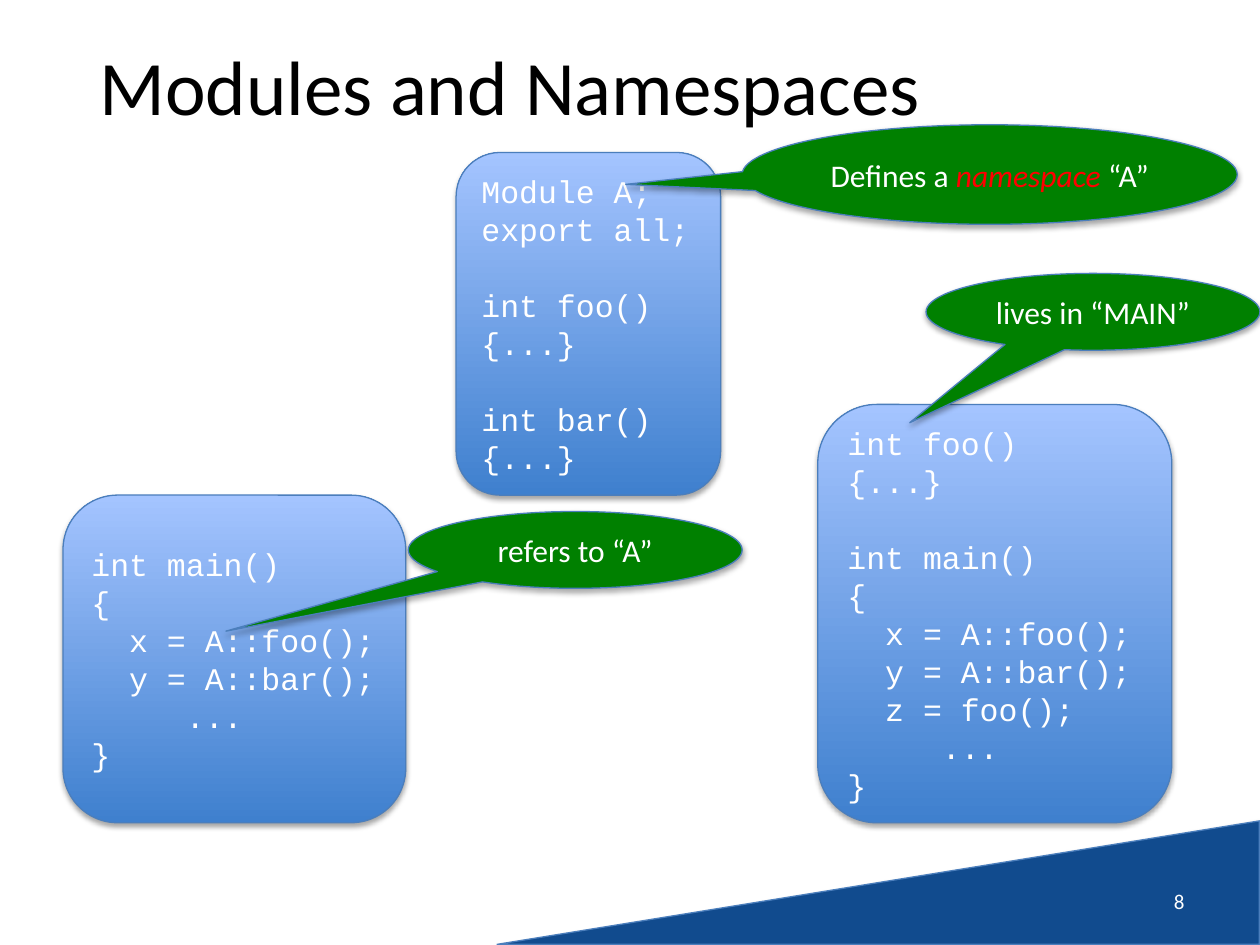
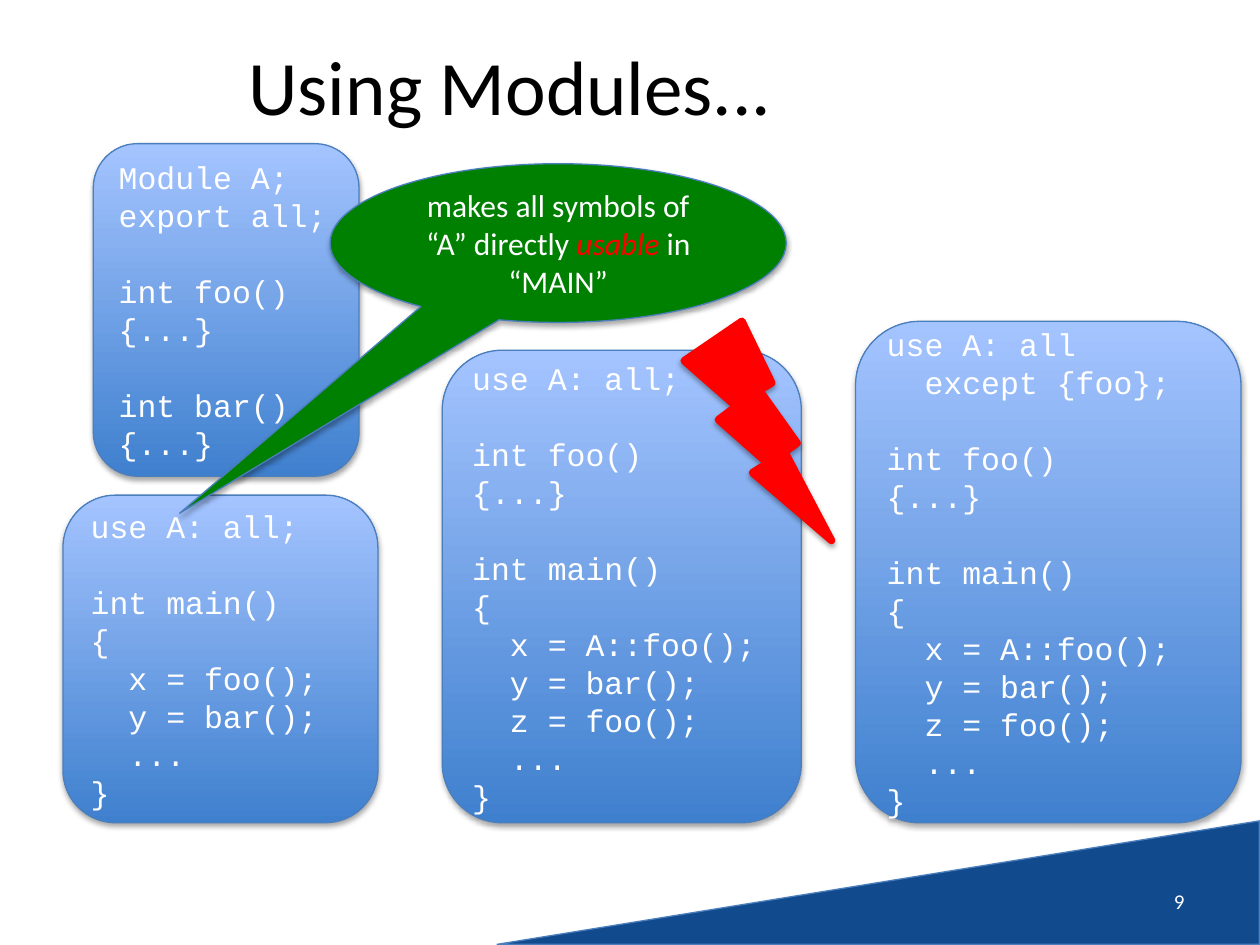
import lxml.etree
import pptx
import pptx.dml.color
import pptx.enum.shapes
import pptx.enum.text
import pptx.oxml
import pptx.oxml.ns
import pptx.util

Inches = pptx.util.Inches
Pt = pptx.util.Pt
SHAPES = pptx.enum.shapes.MSO_SHAPE
ALIGN = pptx.enum.text.PP_ALIGN
MIDDLE = pptx.enum.text.MSO_ANCHOR.MIDDLE

COLORS = {
    "band": "114B8E",
    "outline": "4B7EBC",
    "code_bottom": "3F80CE",
    "code_top": "A4C4FF",
    "callout": "008000",
    "alert": "FF0000",
    "title": "000000",
    "light": "FFFFFF",
    "shadow": "000000",
}
FONTS = {
    "title": {"name": "Calibri", "size": Pt(44)},
    "number": {"name": "Calibri", "size": Pt(12)},
    "callout": {"name": "Calibri", "size": Pt(18), "italic": False},
    "emphasis": {"name": "Calibri", "size": Pt(18), "italic": True},
    "code": {"name": "Courier New", "size": Pt(18)},
}
CODE_LINE = Pt(21.7)

MODULE_A = """Module A;
export all;

int foo()
{...}

int bar()
{...}"""

MAIN_QUALIFIED = """int main()
{
  x = A::foo();
  y = A::bar();
     ...
}"""

MAIN_WITH_OWN_FOO = """int foo()
{...}

int main()
{
  x = A::foo();
  y = A::bar();
  z = foo();
     ...
}"""

MAIN_USING_A = """use A: all;

int main()
{
  x = foo();
  y = bar();
  ...
}"""

FOO_AND_MAIN = """

int foo()
{...}

int main()
{
  x = A::foo();
  y = bar();
  z = foo();
  ...
}"""
MAIN_WITH_CLASH = "use A: all;" + FOO_AND_MAIN
MAIN_EXCEPT_FOO = "use A: all\n  except {foo};" + FOO_AND_MAIN


def rgb(color):
    return pptx.dml.color.RGBColor.from_string(COLORS[color])


def apply_format(target, values):
    for attribute, value in values.items():
        setattr(target, attribute, value)


def place(shape, box):
    sides = ("left", "top", "width", "height")
    apply_format(shape, dict(zip(sides, map(Inches, box))))


def add_run(paragraph, text, font, color):
    run = paragraph.add_run()
    run.text = text
    apply_format(run.font, FONTS[font])
    run.font.color.rgb = rgb(color)


def add_soft_shadow(shape):
    shape.shadow.inherit = False
    effects = shape.element.spPr.find(pptx.oxml.ns.qn("a:effectLst"))
    shadow = lxml.etree.SubElement(
        effects, pptx.oxml.ns.qn("a:outerShdw"),
        blurRad=str(Pt(3.1)), dist=str(Pt(1.8)), dir="5400000", rotWithShape="0")
    tint = lxml.etree.SubElement(
        shadow, pptx.oxml.ns.qn("a:srgbClr"), val=COLORS["shadow"])
    lxml.etree.SubElement(tint, pptx.oxml.ns.qn("a:alpha"), val="35000")


def add_outlined(slide, kind, box, fill=None, line="outline", weight=0.75):
    shape = slide.shapes.add_shape(kind, *map(Inches, box))
    if fill:
        shape.fill.solid()
        shape.fill.fore_color.rgb = rgb(fill)
    shape.line.color.rgb = rgb(line)
    shape.line.width = Pt(weight)
    add_soft_shadow(shape)
    return shape


def add_code_box(slide, box, code):
    """Gradient box of code; an empty code line becomes space before the next."""
    panel = add_outlined(slide, SHAPES.ROUNDED_RECTANGLE, box)
    panel.fill.gradient()
    panel.fill.gradient_angle = 90
    for stop, color in zip(panel.fill.gradient_stops, ("code_bottom", "code_top")):
        stop.color.rgb = rgb(color)
    frame = panel.text_frame
    apply_format(frame, {"word_wrap": True, "vertical_anchor": MIDDLE})
    paragraph, gap = frame.paragraphs[0], Pt(0)
    for number, line in enumerate(code.split("\n")):
        if not line:
            gap = CODE_LINE
            continue
        if number:
            paragraph = frame.add_paragraph()
        apply_format(paragraph, {"alignment": ALIGN.LEFT, "space_before": gap,
                                 "line_spacing": CODE_LINE})
        add_run(paragraph, line, "code", "light")
        gap = Pt(0)


def add_callout(slide, box, tip, before, emphasis="", after=""):
    """Oval callout; tip is the pointer's offset from the centre, in box sizes."""
    callout = add_outlined(slide, SHAPES.OVAL_CALLOUT, box, "callout")
    for index, offset in enumerate(tip):
        callout.adjustments[index] = offset
    frame = callout.text_frame
    apply_format(frame, {"word_wrap": True, "vertical_anchor": MIDDLE})
    paragraph = frame.paragraphs[0]
    paragraph.alignment = ALIGN.CENTER
    add_run(paragraph, before, "callout", "light")
    if emphasis:
        add_run(paragraph, emphasis, "emphasis", "alert")
        add_run(paragraph, after, "callout", "light")


def add_corner_band(layout, slide):
    """Draw the corner wedge once and hand it over to the layout."""
    wedge = add_outlined(slide, SHAPES.RIGHT_TRIANGLE, (6.48, 3.98, 0.98, 6.05), "band")
    wedge.rotation = 270
    layout.shapes.element.insert(2, wedge.element)


def add_page_number(slide, number):
    page = slide.shapes.add_textbox(*map(Inches, (7.17, 6.95, 2.33, 0.4)))
    apply_format(page.text_frame, {"word_wrap": True, "vertical_anchor": MIDDLE})
    paragraph = page.text_frame.paragraphs[0]
    paragraph.alignment = ALIGN.RIGHT
    add_run(paragraph, str(number), "number", "light")


def add_titled_slide(prs, layout, title, number):
    slide = prs.slides.add_slide(layout)
    heading = slide.shapes.title
    place(heading, (0.5, 0.05, 7.1, 1.25))
    heading.text_frame.vertical_anchor = MIDDLE
    paragraph = heading.text_frame.paragraphs[0]
    paragraph.alignment = ALIGN.CENTER
    add_run(paragraph, title, "title", "title")
    add_page_number(slide, number)
    return slide


def fill_namespaces(slide):
    add_code_box(slide, (3.62, 1.21, 2.1, 2.72), MODULE_A)
    add_code_box(slide, (0.5, 3.93, 2.72, 2.6), MAIN_QUALIFIED)
    add_callout(slide, (5.89, 0.99, 3.93, 0.79), (-0.735, 0.099),
                "Defines a ", "namespace ", "“A”")
    add_code_box(slide, (6.49, 3.21, 2.81, 3.32), MAIN_WITH_OWN_FOO)
    add_callout(slide, (7.35, 2.17, 2.65, 0.61), (-0.549, 1.443), "lives in “MAIN”")
    add_callout(slide, (3.24, 4.06, 2.65, 0.61), (-1.046, 1.057), "refers to “A”")


def fill_using_modules(slide):
    add_code_box(slide, (0.74, 1.14, 2.11, 2.64), MODULE_A)
    add_code_box(slide, (0.5, 3.93, 2.5, 2.6), MAIN_USING_A)
    add_code_box(slide, (3.51, 2.78, 2.85, 3.75), MAIN_WITH_CLASH)
    add_callout(slide, (2.62, 1.3, 3.62, 1.26), (-0.83, 1.702),
                "makes all symbols of “A” directly ", "usable ", "in “MAIN”")
    add_outlined(slide, SHAPES.LIGHTNING_BOLT, (5.43, 2.55, 1.17, 1.74),
                 "alert", "alert", 4.25)
    add_code_box(slide, (6.79, 2.55, 3.06, 3.98), MAIN_EXCEPT_FOO)


def main():
    prs = pptx.Presentation()
    apply_format(prs, {"slide_width": Inches(10), "slide_height": Inches(7.5)})
    layout = prs.slide_layouts.get_by_name("Title Only")

    namespaces = add_titled_slide(prs, layout, "Modules and Namespaces", 8)
    add_corner_band(layout, namespaces)
    fill_namespaces(namespaces)

    using_modules = add_titled_slide(prs, layout, "Using Modules...", 9)
    fill_using_modules(using_modules)

    prs.save("out.pptx")


if __name__ == "__main__":
    main()
